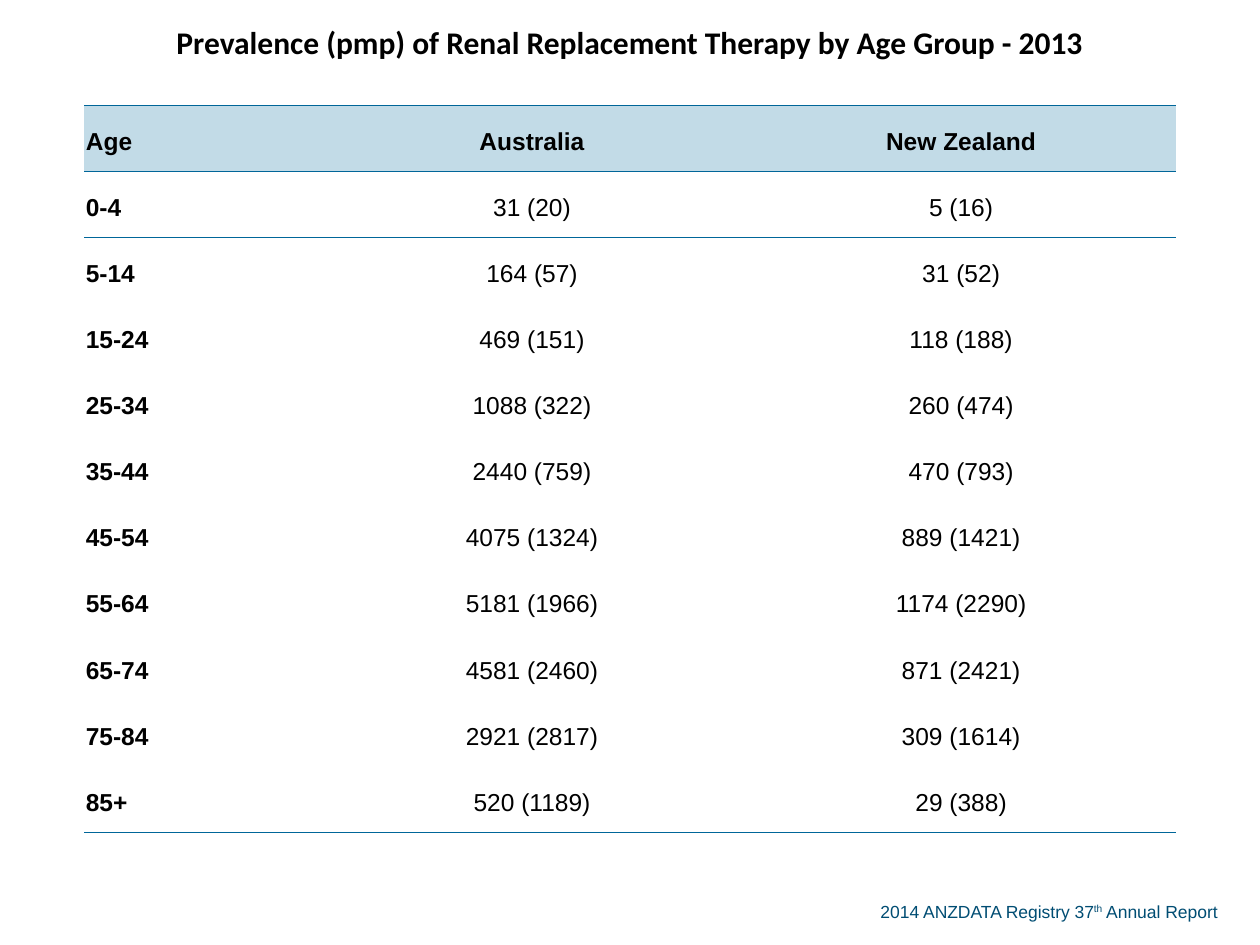
"""Build a slide with a table of renal replacement therapy prevalence by age group."""
from lxml.etree import SubElement
from pptx import Presentation
from pptx.dml.color import RGBColor
from pptx.enum.text import MSO_ANCHOR as Anchor, PP_ALIGN as Align
from pptx.oxml.ns import qn
from pptx.util import Cm, Pt

COLORS = {"text": "000000", "header": "C2DBE7", "rule": "006699", "footer": "004D73"}
TITLE = "Prevalence (pmp) of Renal Replacement Therapy by Age Group - 2013"
HEADER = ("Age", "Australia", "New Zealand")
PREVALENCE = [
    ("0-4", "31 (20)", "5 (16)"),
    ("5-14", "164 (57)", "31 (52)"),
    ("15-24", "469 (151)", "118 (188)"),
    ("25-34", "1088 (322)", "260 (474)"),
    ("35-44", "2440 (759)", "470 (793)"),
    ("45-54", "4075 (1324)", "889 (1421)"),
    ("55-64", "5181 (1966)", "1174 (2290)"),
    ("65-74", "4581 (2460)", "871 (2421)"),
    ("75-84", "2921 (2817)", "309 (1614)"),
    ("85+", "520 (1189)", "29 (388)"),
]
FOOTER = [("2014 ANZDATA Registry 37", False), ("th", True), (" Annual Report", False)]
COLUMN_WIDTHS = (4.7, 8.65, 8.65)
TABLE_LEFT, TABLE_HEIGHT, TITLE_HEIGHT = 1.7, 16.79, 2.12
NO_STYLE = "{2D5ABB26-0587-4C30-8999-92F81FD0307C}"


def add_run(paragraph, text, font_name, size, color, bold=False):
    run = paragraph.add_run()
    run.text = text
    run.font.name, run.font.size, run.font.bold = font_name, Pt(size), bold
    run.font.color.rgb = RGBColor.from_string(COLORS[color])
    return run


def add_rule(cell, side):
    line = SubElement(cell._tc.get_or_add_tcPr(), qn(f"a:ln{side}"), w=str(Pt(0.5)))
    fill = SubElement(line, qn("a:solidFill"))
    SubElement(fill, qn("a:srgbClr"), val=COLORS["rule"])


def format_cell(cell, rules="", fill=None):
    cell.vertical_anchor = Anchor.MIDDLE
    cell.margin_left = cell.margin_right = cell.margin_top = Cm(0.03)
    cell.margin_bottom = 0
    for side in rules:
        add_rule(cell, side)
    if fill:
        cell.fill.solid()
        cell.fill.fore_color.rgb = RGBColor.from_string(COLORS[fill])
    else:
        cell.fill.background()


def add_table(slide):
    rows = [HEADER, *PREVALENCE]
    frame = slide.shapes.add_table(
        len(rows) + 1, len(HEADER), Cm(TABLE_LEFT), 0, Cm(sum(COLUMN_WIDTHS)), Cm(TABLE_HEIGHT)
    )
    table = frame.table
    table.first_row = table.horz_banding = False
    table._tbl.tblPr.find(qn("a:tableStyleId")).text = NO_STYLE
    for column, width in zip(table.columns, COLUMN_WIDTHS):
        column.width = Cm(width)
    for row in table.rows:
        row.height = Cm((TABLE_HEIGHT - TITLE_HEIGHT) / len(rows))
    table.rows[0].height = Cm(TITLE_HEIGHT)

    for cell in table.rows[0].cells:
        format_cell(cell, "B")
    title = table.cell(0, 0)
    title.merge(table.cell(0, len(HEADER) - 1))
    title.margin_bottom = Cm(0.4)
    paragraph = title.text_frame.paragraphs[0]
    paragraph.alignment = Align.CENTER
    add_run(paragraph, TITLE, "Calibri", 18, "text", True)

    rules = {1: "TB", 2: "T", len(rows): "B"}
    for row_index, values in enumerate(rows, 1):
        is_header = row_index == 1
        for column_index, value in enumerate(values):
            cell = table.cell(row_index, column_index)
            format_cell(cell, rules.get(row_index, ""), "header" if is_header else None)
            paragraph = cell.text_frame.paragraphs[0]
            paragraph.alignment = Align.CENTER if column_index else Align.LEFT
            paragraph.line_spacing = 1.19
            paragraph.space_after = Pt(14)
            add_run(paragraph, value, "Arial", 14, "text", is_header or column_index == 0)


def add_footer(slide):
    box = slide.shapes.add_textbox(Cm(17.5), Cm(18.03), Cm(7.6), Cm(0.69))
    box.text_frame.word_wrap = True
    paragraph = box.text_frame.paragraphs[0]
    for text, superscript in FOOTER:
        run = add_run(paragraph, text, "Arial", 10, "footer")
        if superscript:
            run.font._element.set("baseline", "30000")


def main():
    presentation = Presentation()
    presentation.slide_width, presentation.slide_height = Cm(25.4), Cm(19.05)
    slide = presentation.slides.add_slide(presentation.slide_layouts[6])
    add_footer(slide)
    add_table(slide)
    presentation.save("out.pptx")


if __name__ == "__main__":
    main()
